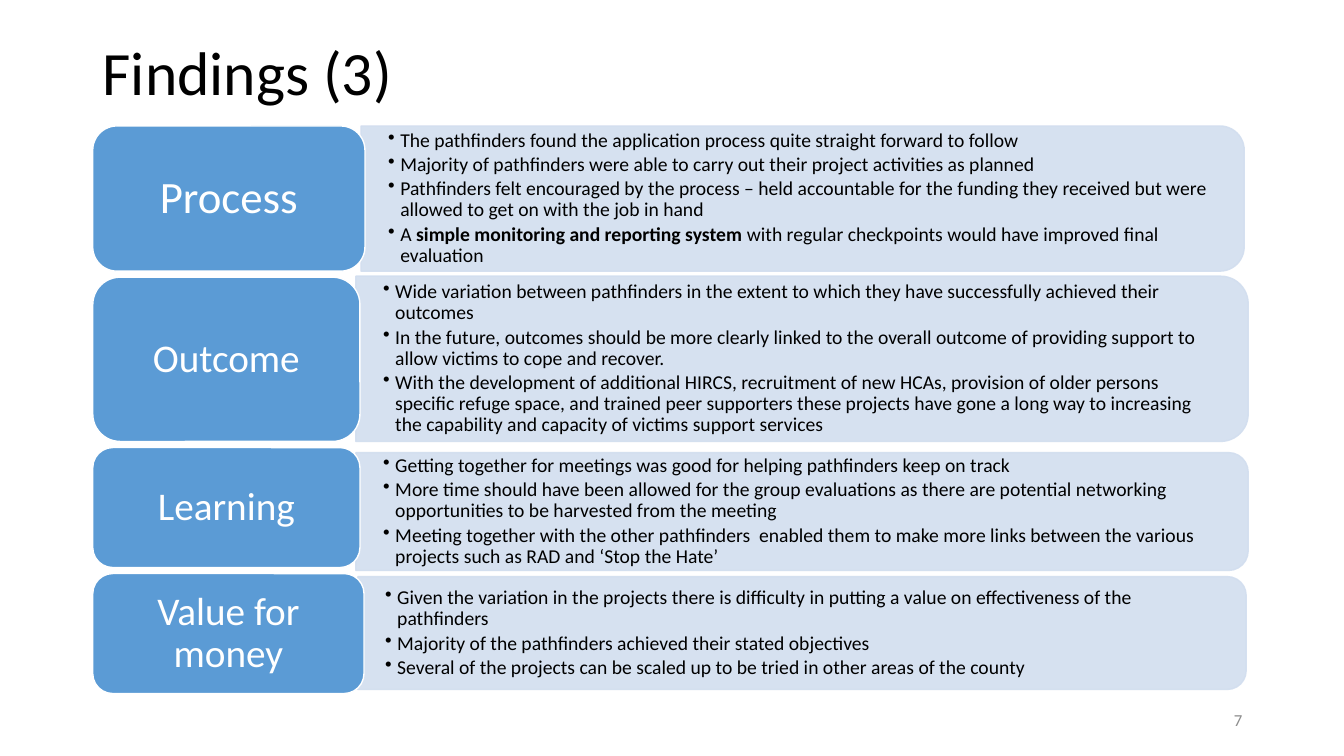
from dataclasses import dataclass

from lxml.etree import SubElement
from pptx import Presentation
from pptx.dml.color import RGBColor
from pptx.enum.shapes import MSO_SHAPE
from pptx.enum.text import MSO_ANCHOR, PP_ALIGN
from pptx.oxml.ns import qn
from pptx.util import Pt

EMU_PER_PX = 9144  # 100 px to the inch


@dataclass(frozen=True)
class Theme:
    font: str = "Calibri"
    black: str = "000000"
    white: str = "FFFFFF"
    grey: str = "8C8C8C"
    label_fill: str = "5B9BD5"
    panel_fill: str = "D2DEEF"
    panel_opacity: int = 90
    title_size: int = 44
    body_size: int = 14
    number_size: int = 12
    line_spacing: float = 0.9
    bullet_gap: float = 2.1
    corner_inset: float = 0.0488  # text inset of a rounded corner, by height


def px(length):
    return int(length * EMU_PER_PX)


class FindingsSlide:
    def __init__(self, presentation, theme):
        self.theme = theme
        self.slide = presentation.slides.add_slide(presentation.slide_layouts[6])

    def add_run(self, paragraph, text, size, color, bold=False):
        run = paragraph.add_run()
        run.text = text
        run.font.name = self.theme.font
        run.font.size = Pt(size)
        run.font.bold = bold
        run.font.color.rgb = RGBColor.from_string(color)

    def prepare_frame(self, shape, margin_x, margin_y):
        frame = shape.text_frame
        frame.word_wrap = True
        frame.vertical_anchor = MSO_ANCHOR.MIDDLE
        frame.margin_left = frame.margin_right = px(margin_x)
        frame.margin_top = frame.margin_bottom = px(margin_y)
        return frame

    def add_text(self, box, text, size, color, align=PP_ALIGN.LEFT):
        shape = self.slide.shapes.add_textbox(*map(px, box))
        paragraph = self.prepare_frame(shape, 10, 5).paragraphs[0]
        paragraph.alignment = align
        paragraph.line_spacing = self.theme.line_spacing
        self.add_run(paragraph, text, size, color)

    def add_block(self, kind, box, fill, line):
        shape = self.slide.shapes.add_shape(kind, *map(px, box))
        shape.shadow.inherit = False
        shape.fill.solid()
        shape.fill.fore_color.rgb = RGBColor.from_string(fill)
        shape.line.color.rgb = RGBColor.from_string(line)
        shape.line.width = Pt(1)
        return shape

    def add_panel(self, left, top, width, height):
        # A quarter turn about the centre puts the rounded corners on the right
        turn = (width - height) / 2
        box = (left + turn, top - turn, height, width)
        color = self.theme.panel_fill
        shape = self.add_block(MSO_SHAPE.ROUND_2_SAME_RECTANGLE, box, color, color)
        shape.rotation = 90
        for element in shape.element.spPr.iter(qn("a:srgbClr")):
            SubElement(element, qn("a:alpha"), val=str(self.theme.panel_opacity * 1000))

    def add_bullets(self, left, top, width, height, bullets):
        inset = round(height * self.theme.corner_inset)
        box = (left, top + inset, width - inset, height - 2 * inset)
        shape = self.slide.shapes.add_textbox(*map(px, box))
        frame = self.prepare_frame(shape, 27, 14)
        for index, bullet in enumerate(bullets):
            paragraph = frame.add_paragraph() if index else frame.paragraphs[0]
            paragraph.line_spacing = self.theme.line_spacing
            paragraph.space_after = Pt(self.theme.bullet_gap)
            properties = paragraph._p.get_or_add_pPr()
            properties.set("marL", str(px(12)))
            properties.set("indent", str(-px(12)))
            SubElement(properties, qn("a:buChar"), char="•")
            # Text between double asterisks is bold
            for part, text in enumerate(bullet.split("**")):
                self.add_run(paragraph, text, self.theme.body_size,
                             self.theme.black, bold=part % 2 == 1)

    def add_label(self, box, text, size):
        shape = self.add_block(MSO_SHAPE.ROUNDED_RECTANGLE, box,
                               self.theme.label_fill, self.theme.white)
        paragraph = self.prepare_frame(shape, 12, 6).paragraphs[0]
        paragraph.alignment = PP_ALIGN.CENTER
        paragraph.line_spacing = self.theme.line_spacing
        self.add_run(paragraph, text, size, self.theme.white)


# Each finding: label, label size, label box, panel box, bullets
FINDINGS = [
    ("Process", 32, (92, 125, 270, 144), (358, 125, 876, 144), [
        "The pathfinders found the application process quite straight forward to follow",
        "Majority of pathfinders were able to carry out their project activities as planned",
        "Pathfinders felt encouraged by the process – held accountable for the funding "
        "they received but were allowed to get on with the job in hand",
        "A **simple monitoring and reporting system **with regular checkpoints would "
        "have improved final evaluation",
    ]),
    ("Outcome", 28, (92, 275, 265, 163), (353, 274, 885, 164), [
        "Wide variation between pathfinders in the extent to which they have "
        "successfully achieved their outcomes",
        "In the future, outcomes should be more clearly linked to the overall outcome "
        "of providing support to allow victims to cope and recover.",
        "With the development of additional HIRCS, recruitment of new HCAs, provision "
        "of older persons specific refuge space, and trained peer supporters these "
        "projects have gone a long way to increasing the capability and capacity of "
        "victims support services",
    ]),
    ("Learning", 28, (92, 444, 265, 119), (353, 449, 885, 117), [
        "Getting together for meetings was good for helping pathfinders keep on track",
        "More time should have been allowed for the group evaluations as there are "
        "potential networking opportunities to be harvested from the meeting",
        "Meeting together with the other pathfinders  enabled them to make more links "
        "between the various projects such as RAD and ‘Stop the Hate’",
    ]),
    ("Value for money", 28, (92, 569, 269, 119), (355, 572, 881, 112), [
        "Given the variation in the projects there is difficulty in putting a value on "
        "effectiveness of the pathfinders",
        "Majority of the pathfinders achieved their stated objectives",
        "Several of the projects can be scaled up to be tried in other areas of the county",
    ]),
]


def main():
    presentation = Presentation()
    presentation.slide_width = px(1333)
    presentation.slide_height = px(750)
    theme = Theme()
    findings = FindingsSlide(presentation, theme)

    # Title
    findings.add_text((92, 26, 1150, 97), "Findings (3)", theme.title_size, theme.black)

    # Rows of findings
    for label, label_size, label_box, panel_box, bullets in FINDINGS:
        findings.add_panel(*panel_box)
        findings.add_bullets(*panel_box, bullets)
        findings.add_label(label_box, label, label_size)

    # Slide number
    findings.add_text((942, 695, 300, 40), "7", theme.number_size, theme.grey,
                      PP_ALIGN.RIGHT)

    presentation.save("out.pptx")


if __name__ == "__main__":
    main()
